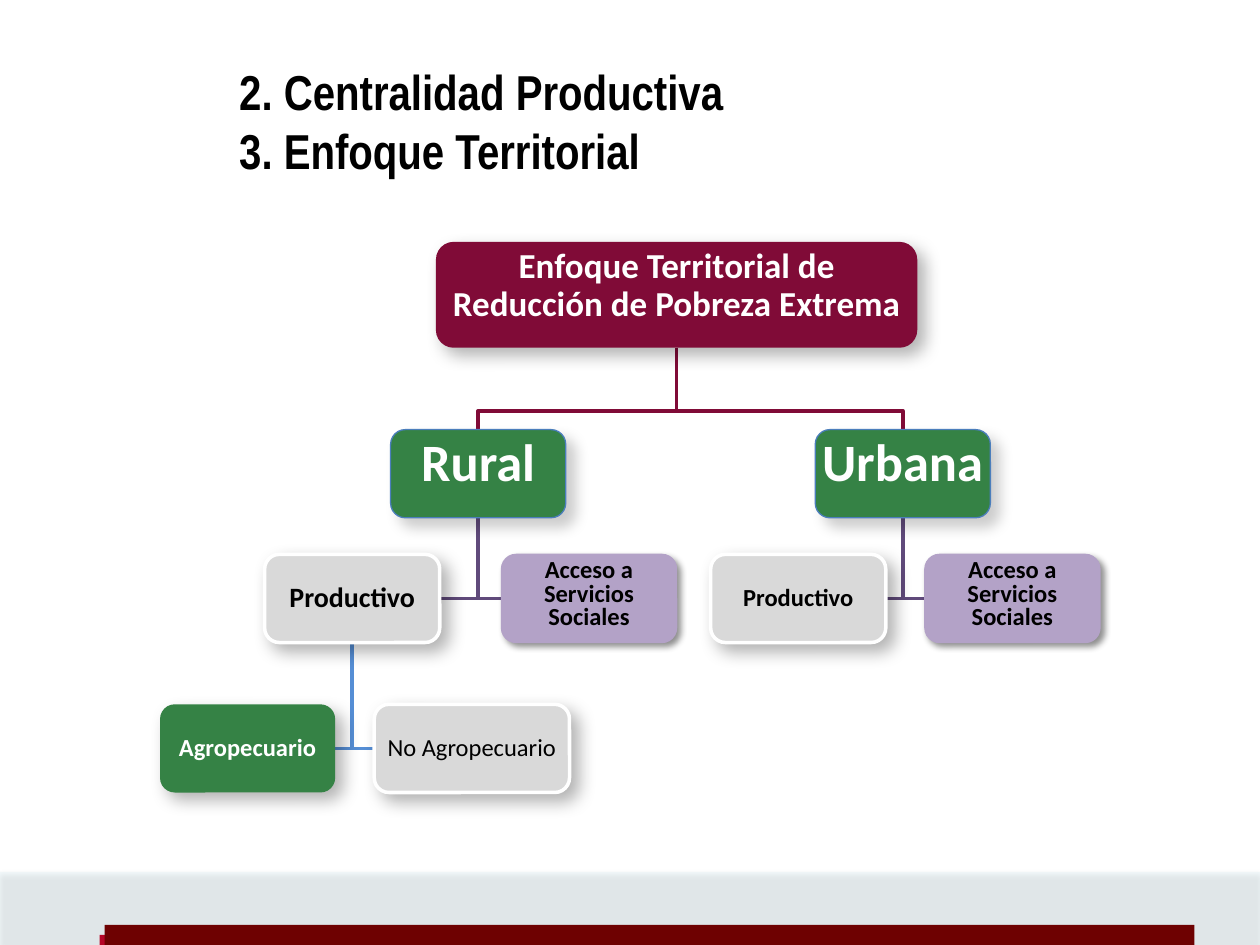
from collections import namedtuple

from lxml.etree import SubElement
from pptx import Presentation
from pptx.dml.color import RGBColor
from pptx.enum.shapes import MSO_SHAPE as Preset
from pptx.enum.text import MSO_ANCHOR as Anchor, MSO_AUTO_SIZE as AutoSize, PP_ALIGN as Align
from pptx.oxml.ns import qn
from pptx.util import Inches, Pt

SLIDE_WIDTH, SLIDE_HEIGHT = Inches(10), Inches(7.5)
COLUMN, ROW = SLIDE_WIDTH / 100, SLIDE_HEIGHT / 75

BLACK = RGBColor(0x00, 0x00, 0x00)
WHITE = RGBColor(0xFF, 0xFF, 0xFF)
PALE_BLUE = RGBColor(0xDB, 0xEE, 0xF4)
RED = RGBColor(0xB6, 0x05, 0x27)
DARK_RED = RGBColor(0x6E, 0x01, 0x01)
WINE = RGBColor(0x80, 0x0B, 0x37)
GREEN = RGBColor(0x35, 0x82, 0x45)
GREY = RGBColor(0xD9, 0xD9, 0xD9)
LILAC = RGBColor(0xB3, 0xA2, 0xC7)
PURPLE = RGBColor(0x60, 0x4A, 0x7B)
BLUE = RGBColor(0x55, 0x8E, 0xD5)
EDGE_BLUE = RGBColor(0x4B, 0x7E, 0xBC)

Box = namedtuple("Box", "left top width height")
Shadow = namedtuple("Shadow", "opacity blur distance angle")
Style = namedtuple("Style", "fill edge edge_width color shadow anchor inset line_spacing space_after")

DEEP = Shadow(30, 10, 6, 45)
SOFT = Shadow(20, 8, 7, 45)
TIGHT = Shadow(43, 4, 3, 45)
BAND = Shadow(35, 3.1, 1.8, 90)

ROOT = Style(WINE, None, 0, WHITE, DEEP, Anchor.TOP, 0.01, 0.9, 0.35)
AREA = Style(GREEN, EDGE_BLUE, 0.75, WHITE, SOFT, Anchor.TOP, 0.02, 0.9, 0.35)
PRODUCTIVE = Style(GREY, WHITE, 2, BLACK, DEEP, Anchor.MIDDLE, 0.01, 0.9, 0.35)
FARMING = Style(GREEN, None, 0, WHITE, DEEP, Anchor.MIDDLE, 0.01, 0.9, 0.35)
ACCESS = Style(LILAC, LILAC, 0.75, BLACK, TIGHT, Anchor.TOP, 0.01, 0.8, 0)

NODE_WIDTH, NODE_HEIGHT = 13.9, 7
AREA_ROW, BRANCH_ROW, LEAF_ROW = 34.1, 44, 55.9


def node_box(left, top, width=NODE_WIDTH):
    return Box(left, top, width, NODE_HEIGHT)


def place(box):
    return (round(box.left * COLUMN), round(box.top * ROW),
            round(box.width * COLUMN), round(box.height * ROW))


def add_shadow(shape, shadow):
    effects = shape._element.spPr.find(qn("a:effectLst"))
    outer = SubElement(effects, qn("a:outerShdw"), blurRad=str(Pt(shadow.blur)),
                       dist=str(Pt(shadow.distance)), dir=str(shadow.angle * 60000),
                       algn="ctr", rotWithShape="0")
    color = SubElement(outer, qn("a:srgbClr"), val=str(BLACK))
    SubElement(color, qn("a:alpha"), val=str(shadow.opacity * 1000))


def add_block(slide, preset, box, fill, shadow=None):
    shape = slide.shapes.add_shape(preset, *place(box))
    shape.shadow.inherit = False
    shape.fill.solid()
    shape.fill.fore_color.rgb = fill
    shape.line.fill.background()
    if shadow:
        add_shadow(shape, shadow)
    return shape


def set_font(paragraph, name, size, color, bold):
    font = paragraph.font
    font.name, font.size, font.bold = name, Pt(size), bold
    font.color.rgb = color


def add_node(slide, box, text, size, style, bold=True, align=Align.CENTER):
    shape = add_block(slide, Preset.ROUNDED_RECTANGLE, box, style.fill, style.shadow)
    if style.edge is not None:
        shape.line.color.rgb = style.edge
        shape.line.width = Pt(style.edge_width)
    frame = shape.text_frame
    frame.word_wrap = True
    frame.vertical_anchor = style.anchor
    frame.margin_left = frame.margin_right = Inches(style.inset)
    frame.margin_top = frame.margin_bottom = Inches(style.inset)
    paragraph = frame.paragraphs[0]
    paragraph.text = text
    paragraph.alignment = align
    paragraph.line_spacing = style.line_spacing
    paragraph.space_after = Pt(size * style.space_after)
    set_font(paragraph, "Calibri", size, style.color, bold)


def add_path(slide, points, color):
    start, *others = [(round(x * COLUMN), round(y * ROW)) for x, y in points]
    builder = slide.shapes.build_freeform(*start)
    builder.add_line_segments(others, close=False)
    shape = builder.convert_to_shape()
    shape.shadow.inherit = False
    shape.fill.background()
    shape.line.color.rgb = color
    shape.line.width = Pt(2)


def bottom_middle(box):
    return box.left + box.width / 2, box.top + box.height


def link_down(slide, parent, child, color):
    x, y = bottom_middle(parent)
    child_x = child.left + child.width / 2
    bend = child.top - 1.5
    add_path(slide, [(x, y), (x, bend), (child_x, bend), (child_x, child.top)], color)


def link_side(slide, parent, child, color):
    x, y = bottom_middle(parent)
    middle = child.top + child.height / 2
    side = child.left if child.left > x else child.left + child.width
    add_path(slide, [(x, y), (x, middle), (side, middle)], color)


def add_band(slide):
    band = add_block(slide, Preset.RECTANGLE, Box(0, 69.2, 100, 5.8), PALE_BLUE, BAND)
    color = band._element.spPr.find(qn("a:solidFill"))[0]
    SubElement(color, qn("a:alpha"), val="32000")
    add_block(slide, Preset.RECTANGLE, Box(7.9, 74.2, 84.3, 2.5), RED)
    add_block(slide, Preset.RECTANGLE, Box(8.3, 73.4, 86.5, 1.6), DARK_RED)


def add_title(slide, box, lines):
    frame = slide.shapes.add_textbox(*place(box)).text_frame
    frame.word_wrap = True
    frame.auto_size = AutoSize.SHAPE_TO_FIT_TEXT
    frame.text = "\n".join(lines)
    for paragraph in frame.paragraphs:
        set_font(paragraph, "Arial Narrow", 28, BLACK, True)


def add_tree(slide):
    root = Box(34.6, 19.2, 38.2, 8.4)
    rural, urban = node_box(31, AREA_ROW), node_box(64.7, AREA_ROW)
    rural_work, rural_access = node_box(21, BRANCH_ROW), node_box(39.8, BRANCH_ROW)
    urban_work, urban_access = node_box(56.4, BRANCH_ROW), node_box(73.4, BRANCH_ROW)
    farming, other = node_box(12.7, LEAF_ROW), node_box(29.7, LEAF_ROW, 15.5)

    for area in (rural, urban):
        link_down(slide, root, area, WINE)
    for parent, children, color in (
        (rural, (rural_work, rural_access), PURPLE),
        (urban, (urban_work, urban_access), PURPLE),
        (rural_work, (farming, other), BLUE),
    ):
        for child in children:
            link_side(slide, parent, child, color)

    add_node(slide, root, "Enfoque Territorial de Reducción de Pobreza Extrema", 20, ROOT)
    add_node(slide, rural, "Rural", 30, AREA)
    add_node(slide, urban, "Urbana", 30, AREA, align=Align.LEFT)
    add_node(slide, rural_work, "Productivo", 16, PRODUCTIVE)
    add_node(slide, urban_work, "Productivo", 14, PRODUCTIVE)
    for access in (rural_access, urban_access):
        add_node(slide, access, "Acceso a Servicios Sociales", 14, ACCESS)
    add_node(slide, farming, "Agropecuario", 14, FARMING)
    add_node(slide, other, "No Agropecuario", 14, PRODUCTIVE, bold=False)


def main():
    presentation = Presentation()
    presentation.slide_width, presentation.slide_height = SLIDE_WIDTH, SLIDE_HEIGHT
    slide = presentation.slides.add_slide(presentation.slide_layouts[6])
    add_band(slide)
    add_tree(slide)
    add_title(slide, Box(18, 4.4, 68.8, 10.4),
              ("2. Centralidad Productiva", "3. Enfoque Territorial"))
    presentation.save("out.pptx")


if __name__ == "__main__":
    main()
